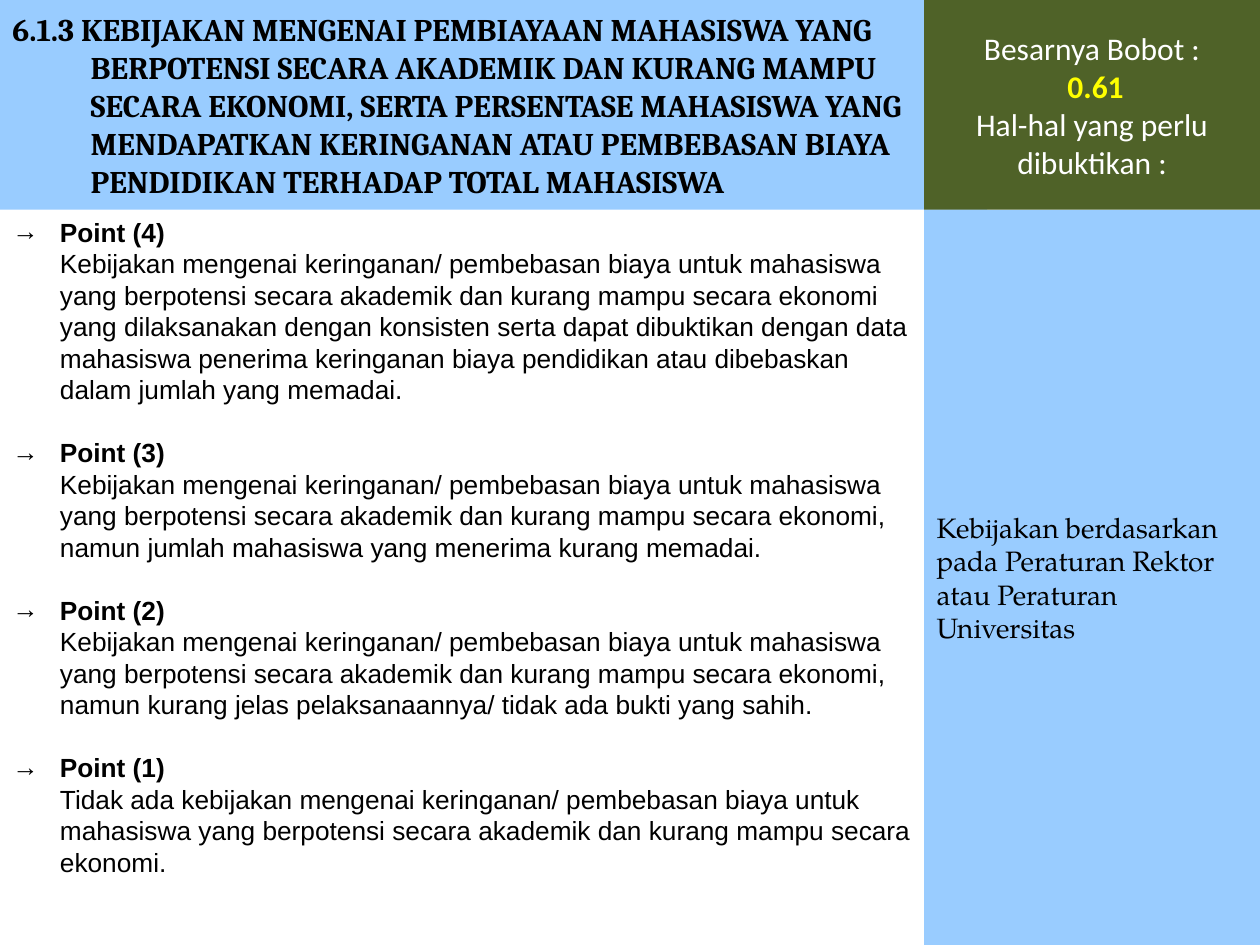
import pptx
import pptx.dml.color
import pptx.enum.shapes
import pptx.enum.text
import pptx.oxml.ns
import pptx.util
from lxml import etree

Cm, Pt = pptx.util.Cm, pptx.util.Pt
ALIGN = pptx.enum.text.PP_ALIGN
COLORS = {"sky": "99CCFF", "olive": "4F6228", "black": "000000",
          "white": "FFFFFF", "yellow": "FFFF00"}

prs = pptx.Presentation()
prs.slide_width, prs.slide_height = Cm(25.4), Cm(19.05)
s = prs.slides.add_slide(prs.slide_layouts[6])

HEAD_H = Cm(4.23)
SIDE_X = Cm(18.63)
SIDE_W = prs.slide_width - SIDE_X
BODY_H = prs.slide_height - HEAD_H


def add_run(p, text, font, size, color="black", bold=False):
    r = p.add_run()
    r.text = text
    r.font.name, r.font.size, r.font.bold = font, Pt(size), bold
    r.font.color.rgb = pptx.dml.color.RGBColor.from_string(COLORS[color])


def add_panel(x, y, w, h, fill):
    """Add a plain filled rectangle and return its text frame."""
    sp = s.shapes.add_shape(pptx.enum.shapes.MSO_SHAPE.RECTANGLE, x, y, w, h)
    sp.shadow.inherit = False
    sp.fill.solid()
    sp.fill.fore_color.rgb = pptx.dml.color.RGBColor.from_string(COLORS[fill])
    sp.line.fill.background()
    tf = sp.text_frame
    tf.word_wrap = True
    tf.vertical_anchor = pptx.enum.text.MSO_ANCHOR.MIDDLE
    return tf


# Scoring criteria
COMMON = ("Kebijakan mengenai keringanan/ pembebasan biaya untuk mahasiswa "
          "yang berpotensi secara akademik dan kurang mampu secara ekonomi")
criteria = [
    ("Point (4)", COMMON + " yang dilaksanakan dengan konsisten serta dapat "
     "dibuktikan dengan data mahasiswa penerima keringanan biaya pendidikan "
     "atau dibebaskan dalam jumlah yang memadai."),
    ("Point (3)", COMMON + ", namun jumlah mahasiswa yang menerima kurang memadai."),
    ("Point (2)", COMMON + ", namun kurang jelas pelaksanaannya/ tidak ada "
     "bukti yang sahih."),
    ("Point (1)", "Tidak ada kebijakan mengenai keringanan/ pembebasan biaya "
     "untuk mahasiswa yang berpotensi secara akademik dan kurang mampu secara "
     "ekonomi."),
]
tf = s.shapes.add_textbox(0, HEAD_H, Cm(18.85), BODY_H).text_frame
tf.word_wrap = True
for i, (heading, description) in enumerate(criteria):
    p = tf.add_paragraph() if i else tf.paragraphs[0]
    p.line_spacing = Pt(18)
    p.space_before = Pt(18 if i else 0)
    pPr = p._p.get_or_add_pPr()
    pPr.set("marL", str(Cm(0.96)))
    pPr.set("indent", str(-Cm(0.96)))
    for tag, key, value in [("a:buFont", "typeface", "Arial"),
                            ("a:buChar", "char", "→")]:
        etree.SubElement(pPr, pptx.oxml.ns.qn(tag)).set(key, value)
    add_run(p, heading, "Arial", 15, bold=True)

    p = tf.add_paragraph()
    p.line_spacing = Pt(18)
    p._p.get_or_add_pPr().set("marL", str(Cm(0.96)))
    add_run(p, description, "Arial", 15)

# Title
p = add_panel(0, 0, Cm(19.9), HEAD_H, "sky").paragraphs[0]
p.alignment = ALIGN.LEFT
pPr = p._p.get_or_add_pPr()
pPr.set("marL", str(Cm(1.58)))
pPr.set("indent", str(-Cm(1.58)))
add_run(p, "6.1.3 KEBIJAKAN MENGENAI PEMBIAYAAN MAHASISWA YANG BERPOTENSI SECARA "
        "AKADEMIK DAN KURANG MAMPU SECARA EKONOMI, SERTA PERSENTASE MAHASISWA "
        "YANG MENDAPATKAN KERINGANAN ATAU PEMBEBASAN BIAYA PENDIDIKAN TERHADAP "
        "TOTAL MAHASISWA", "Cambria", 18, bold=True)

# Evidence
p = add_panel(SIDE_X, HEAD_H, SIDE_W, BODY_H, "sky").paragraphs[0]
p.alignment = ALIGN.LEFT
add_run(p, "Kebijakan berdasarkan pada Peraturan Rektor atau Peraturan Universitas",
        "TeX Gyre Pagella", 16)

# Weight
tf = add_panel(SIDE_X, 0, SIDE_W, HEAD_H, "olive")
weight_lines = [("Besarnya Bobot :", "white", False),
                (" 0.61", "yellow", True),
                ("Hal-hal yang perlu dibuktikan :", "white", False)]
for i, (text, color, bold) in enumerate(weight_lines):
    p = tf.add_paragraph() if i else tf.paragraphs[0]
    p.alignment = ALIGN.CENTER
    add_run(p, text, "Calibri", 18, color, bold)

prs.save("out.pptx")
